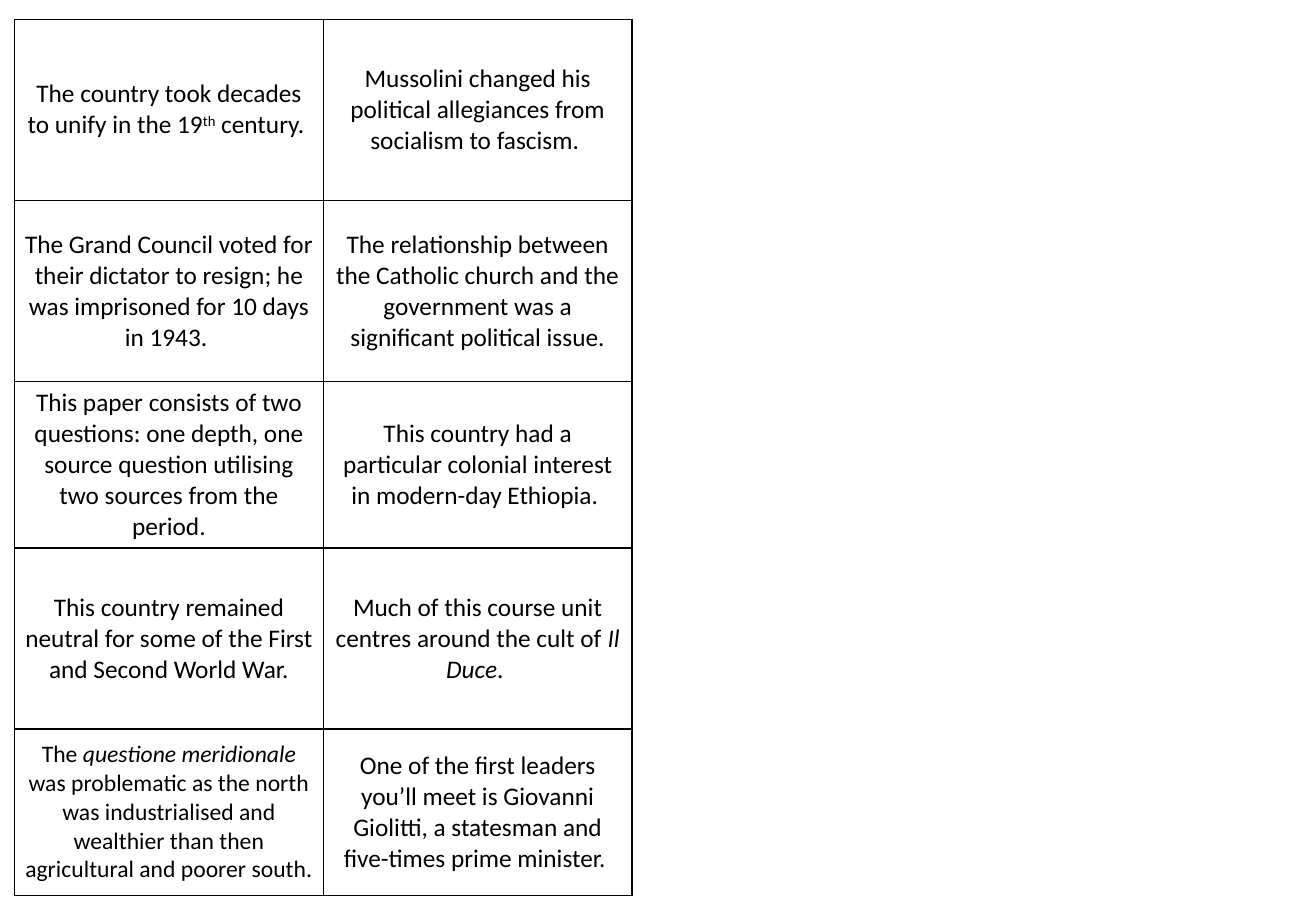
from lxml.etree import SubElement
from pptx import Presentation
from pptx.dml.color import RGBColor
from pptx.enum.text import MSO_ANCHOR, PP_ALIGN
from pptx.oxml.ns import qn
from pptx.util import Pt

COLORS = {"ink": "000000", "paper": "FFFFFF"}
FONT_NAME = "Calibri"
TEXT_SIZE, SMALL_SIZE = 15, 14
BORDER_WIDTH = 1

# Each card is a list of (text, style) runs.
CARDS = [
    [
        [("The country took decades to unify in the 19", ""), ("th", "superscript"), (" century. ", "")],
        [("Mussolini changed his political allegiances from socialism to fascism. ", "")],
    ],
    [
        [("The Grand Council voted for their dictator to resign; he was imprisoned "
          "for 10 days in 1943. ", "")],
        [("The relationship between the Catholic church and the government was a "
          "significant political issue.", "")],
    ],
    [
        [("This paper consists of two questions: one depth, one source question "
          "utilising two sources from the period.", "")],
        [("This country had a particular colonial interest in modern-day Ethiopia. ", "")],
    ],
    [
        [("This country remained neutral for some of the First and Second World War.", "")],
        [("Much of this course unit centres around the cult of ", ""), ("Il Duce", "italic"), (". ", "")],
    ],
    [
        [("The ", ""), ("questione meridionale", "italic"),
         (" was problematic as the north was industrialised and wealthier than then "
          "agricultural and poorer south.", "")],
        [("One of the first leaders you’ll meet is Giovanni Giolitti, a statesman and "
          "five-times prime minister. ", "")],
    ],
]
SMALL_CARDS = {(4, 0)}

SLIDE_WIDTH, SLIDE_HEIGHT = 780, 540
TABLE_LEFT, TABLE_TOP = 8.64, 11.4
COLUMN_WIDTH = 183
ROW_HEIGHTS = [107.4, 107.4, 98.7, 107.4, 98.7]
CELL_FORMAT = {
    "vertical_anchor": MSO_ANCHOR.MIDDLE,
    "margin_left": Pt(5.6), "margin_right": Pt(5.6),
    "margin_top": Pt(2.8), "margin_bottom": Pt(2.8),
}


def set_borders(cell):
    properties = cell._tc.get_or_add_tcPr()
    for position, side in enumerate(("lnL", "lnR", "lnT", "lnB")):
        line = properties.makeelement(qn(f"a:{side}"), {"w": str(Pt(BORDER_WIDTH))})
        properties.insert(position, line)
        fill = SubElement(line, qn("a:solidFill"))
        SubElement(fill, qn("a:srgbClr"), val=COLORS["ink"])


def write_card(cell, runs, size):
    for name, value in CELL_FORMAT.items():
        setattr(cell, name, value)
    cell.fill.solid()
    cell.fill.fore_color.rgb = RGBColor.from_string(COLORS["paper"])
    set_borders(cell)
    paragraph = cell.text_frame.paragraphs[0]
    paragraph.alignment = PP_ALIGN.CENTER
    for text, style in runs:
        run = paragraph.add_run()
        run.text = text
        font_format = {"name": FONT_NAME, "size": Pt(size), "bold": False, "italic": style == "italic"}
        for name, value in font_format.items():
            setattr(run.font, name, value)
        run.font.color.rgb = RGBColor.from_string(COLORS["ink"])
        if style == "superscript":
            run.font._element.set("baseline", "30000")


def main():
    presentation = Presentation()
    presentation.slide_width, presentation.slide_height = Pt(SLIDE_WIDTH), Pt(SLIDE_HEIGHT)
    slide = presentation.slides.add_slide(presentation.slide_layouts[6])
    column_count = len(CARDS[0])
    table = slide.shapes.add_table(
        len(CARDS), column_count, Pt(TABLE_LEFT), Pt(TABLE_TOP),
        Pt(COLUMN_WIDTH * column_count), Pt(sum(ROW_HEIGHTS))).table
    table.first_row = table.horz_banding = False
    for column in table.columns:
        column.width = Pt(COLUMN_WIDTH)
    for row_index, (height, cards) in enumerate(zip(ROW_HEIGHTS, CARDS)):
        table.rows[row_index].height = Pt(height)
        for column_index, runs in enumerate(cards):
            size = SMALL_SIZE if (row_index, column_index) in SMALL_CARDS else TEXT_SIZE
            write_card(table.cell(row_index, column_index), runs, size)
    presentation.save("out.pptx")


if __name__ == "__main__":
    main()
